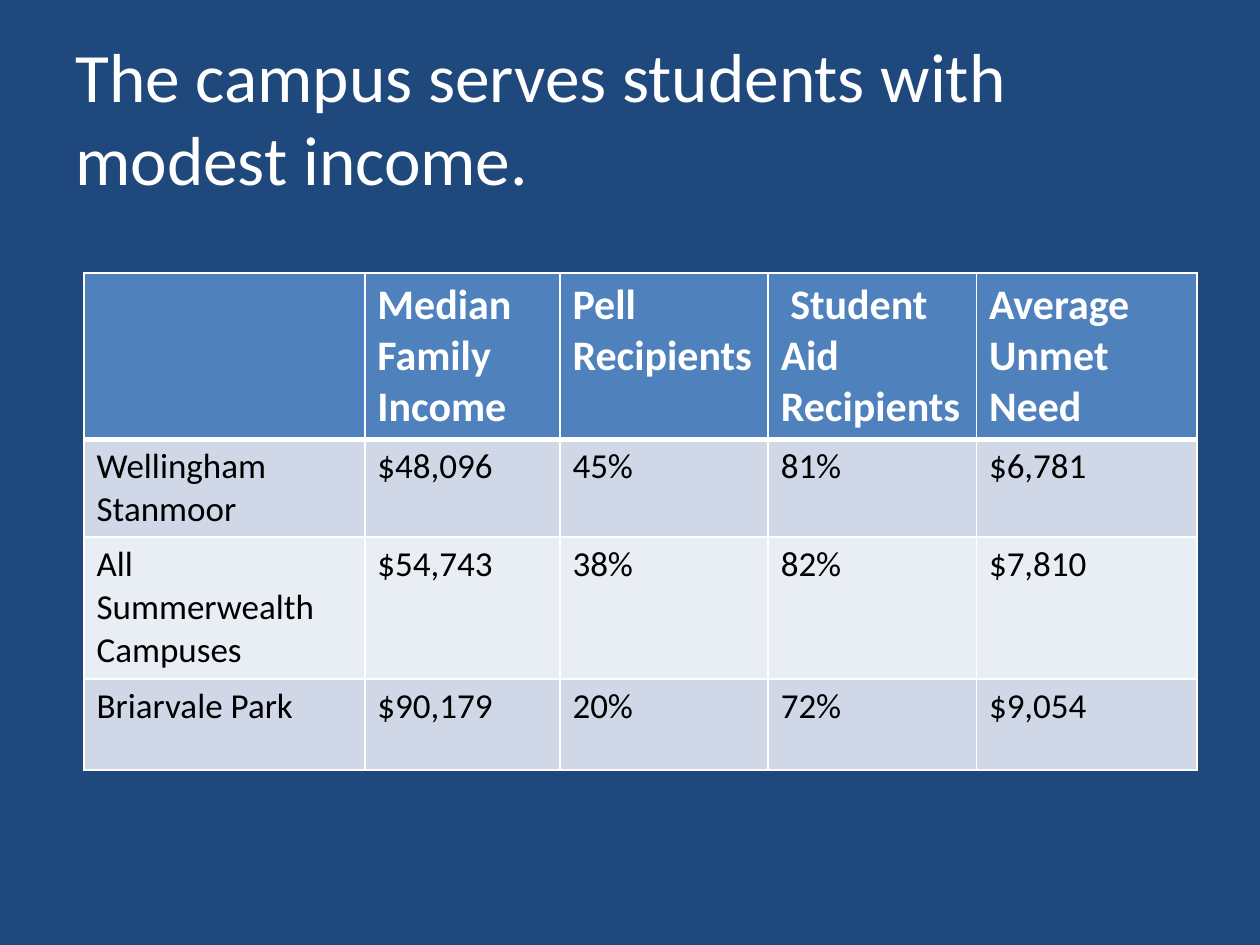
from lxml import etree
from pptx import Presentation
from pptx.dml.color import RGBColor
from pptx.enum import text as txt
from pptx.oxml import ns
from pptx.util import Pt

NAVY, BLUE, WHITE, BLACK = "1F497D", "4F81BD", "FFFFFF", "000000"
BANDS = ["D0D8E8", "E9EDF4"]
COLS = [160.5, 111.5, 119, 119, 126]
ROWS = [95, 56, 81, 52]
DATA = [
    ["", "Median Family Income", "Pell Recipients",
     " Student Aid\nRecipients", "Average Unmet Need"],
    ["Wellingham\nStanmoor", "$48,096", "45%", "81%", "$6,781"],
    ["All Summerwealth Campuses", "$54,743", "38%", "82%", "$7,810"],
    ["Briarvale Park", "$90,179", "20%", "72%", "$9,054"],
]


def paint(fill, color):
    fill.solid()
    fill.fore_color.rgb = RGBColor.from_string(color)


def write(frame, words, size=20, color=BLACK, bold=False):
    """Fill a text frame, one paragraph to each line of words."""
    frame.word_wrap = True
    frame.text = words
    for para in frame.paragraphs:
        para.font.size = Pt(size)
        for run in para.runs:
            font = run.font
            font.name, font.size, font.bold = "Calibri", Pt(size), bold
            font.color.rgb = RGBColor.from_string(color)


def edge(cell, side, width):
    """Draw one white cell border; side is L, R, T or B."""
    props = cell._tc.get_or_add_tcPr()
    line = etree.SubElement(props, ns.qn(f"a:ln{side}"), w=str(Pt(width)))
    fill = etree.SubElement(line, ns.qn("a:solidFill"))
    etree.SubElement(fill, ns.qn("a:srgbClr"), val=WHITE)


def add_title(slide):
    box = slide.shapes.add_textbox(Pt(36), Pt(21.6), Pt(648), Pt(90))
    box.text_frame.vertical_anchor = txt.MSO_ANCHOR.MIDDLE
    write(box.text_frame, "The campus serves students with modest income.",
          size=39.6, color=WHITE)


def add_grid(slide):
    grid = slide.shapes.add_table(
        len(ROWS), len(COLS), Pt(48), Pt(156),
        Pt(sum(COLS)), Pt(sum(ROWS))).table
    for col, width in zip(grid.columns, COLS):
        col.width = Pt(width)
    for r, (row, height) in enumerate(zip(grid.rows, ROWS)):
        row.height = Pt(height)
        head = r == 0
        look = dict(size=24, color=WHITE, bold=True) if head else {}
        for cell, words in zip(row.cells, DATA[r]):
            write(cell.text_frame, words, **look)
            for side in "LRTB":
                thick = (head and side == "B") or (r == 1 and side == "T")
                edge(cell, side, 3 if thick else 1)
            paint(cell.fill, BLUE if head else BANDS[(r - 1) % 2])


def main():
    deck = Presentation()
    deck.slide_width, deck.slide_height = Pt(720), Pt(540)
    slide = deck.slides.add_slide(deck.slide_layouts[6])
    paint(slide.background.fill, NAVY)
    add_title(slide)
    add_grid(slide)
    deck.save("out.pptx")


if __name__ == "__main__":
    main()
